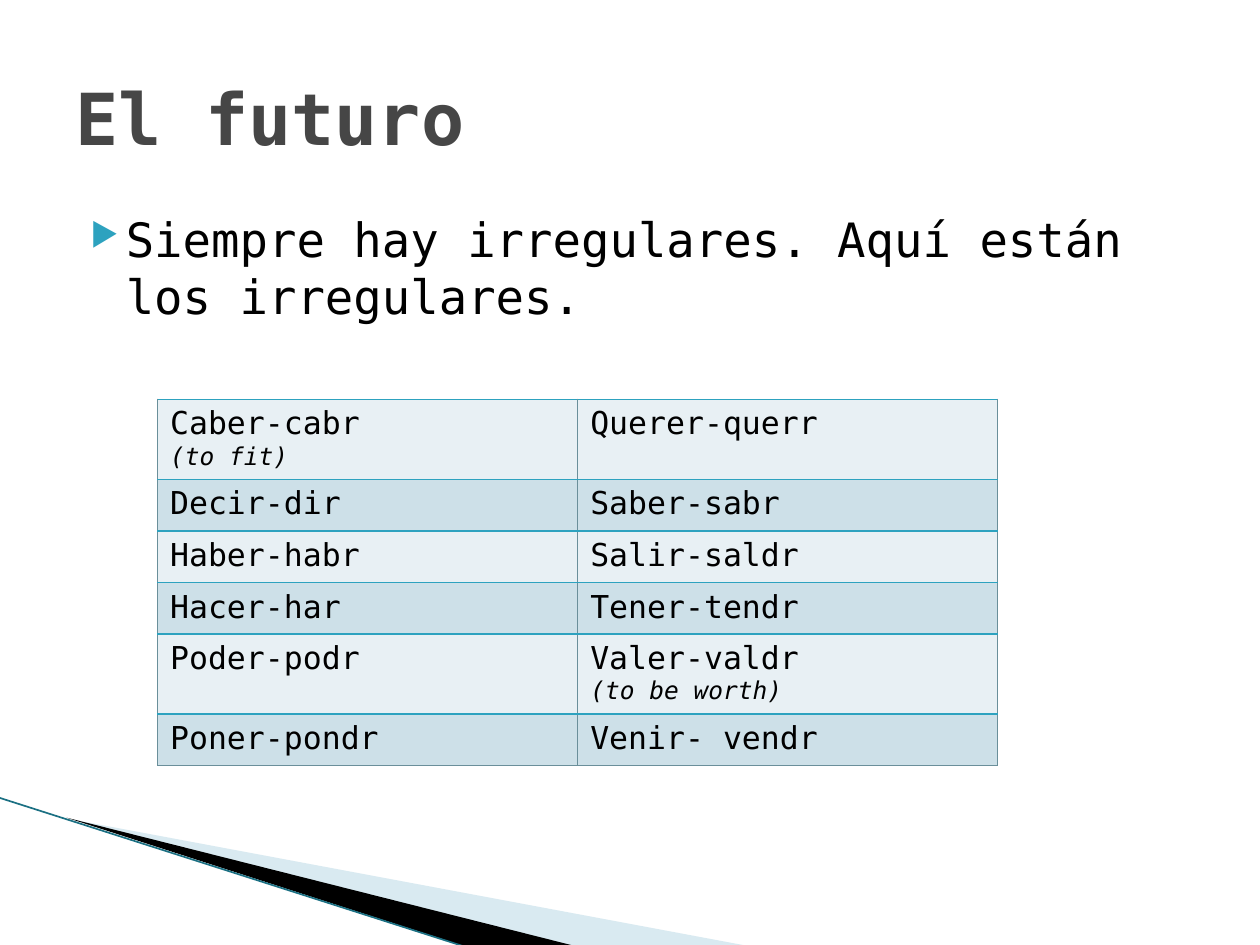
from lxml import etree
from pptx import Presentation
from pptx.dml.color import RGBColor
from pptx.enum import shapes, text
from pptx.oxml import ns
from pptx.util import Inches, Pt

FONT = "DejaVu Sans Mono"
BLACK = RGBColor(0, 0, 0)
GREY = RGBColor(0x46, 0x46, 0x46)
TEAL = RGBColor(0x2D, 0xA2, 0xBF)
DARK = RGBColor(0x1B, 0x70, 0x83)
EDGE = RGBColor(0x6A, 0x8F, 0x9A)
PALE = RGBColor(0xA0, 0xCB, 0xDC)
BANDS = RGBColor(0xE8, 0xF0, 0xF4), RGBColor(0xCD, 0xE0, 0xE8)

TITLE = "El futuro"
INTRO = "Siempre hay irregulares. Aquí están los irregulares."
VERBS = [
    ("Caber-cabr\n(to fit)", "Querer-querr"),
    ("Decir-dir", "Saber-sabr"),
    ("Haber-habr", "Salir-saldr"),
    ("Hacer-har", "Tener-tendr"),
    ("Poder-podr", "Valer-valdr\n(to be worth)"),
    ("Poner-pondr", "Venir- vendr"),
]
WEDGES = [
    ([(0.55, 6.5), (5.95, 7.51), (4.56, 7.51)], PALE, 40),
    ([(0.53, 6.49), (4.57, 7.51), (3.72, 7.52)], BLACK, 100),
]
HEAD = {"size": Pt(41), "bold": True}
BODY = {"size": Pt(27)}
VERB = {"size": Pt(18)}
GLOSS = {"size": Pt(14), "italic": True}


def style(par, form, color=BLACK):
    for key, val in {"name": FONT, **form}.items():
        setattr(par.font, key, val)
    par.font.color.rgb = color


def add(root, tag, **attrs):
    return etree.SubElement(root, ns.qn(tag), attrs)


def border(cell, side, color, width):
    line = add(cell._tc.get_or_add_tcPr(), "a:ln" + side, w=str(Pt(width)))
    add(add(line, "a:solidFill"), "a:srgbClr", val=str(color))


def wedge(slide, points, color, alpha):
    start, *rest = [(Inches(x), Inches(y)) for x, y in points]
    pen = slide.shapes.build_freeform(*start)
    pen.add_line_segments(rest)
    shape = pen.convert_to_shape()
    shape.shadow.inherit = False
    shape.fill.solid()
    shape.fill.fore_color.rgb = color
    shape.line.fill.background()
    if alpha < 100:
        tone = shape._element.spPr.find(".//" + ns.qn("a:srgbClr"))
        add(tone, "a:alpha", val=str(alpha * 1000))


def stripe(slide):
    ends = [Inches(n) for n in (-0.01, 6.33, 3.71, 7.52)]
    line = slide.shapes.add_connector(shapes.MSO_CONNECTOR.STRAIGHT, *ends)
    line.line.color.rgb = DARK
    line.line.width = Pt(0.95)
    add(line._element.spPr, "a:effectLst")


def heading(slide):
    box = slide.shapes.title
    box.left, box.top = Inches(0.5), Inches(0.3)
    box.width, box.height = Inches(9), Inches(1.25)
    frame = box.text_frame
    frame.text = TITLE
    frame.vertical_anchor = text.MSO_ANCHOR.MIDDLE
    par = frame.paragraphs[0]
    par.alignment = text.PP_ALIGN.LEFT
    style(par, HEAD, GREY)


def intro(slide):
    box = slide.shapes.add_textbox(Inches(0.5), Inches(1.62), Inches(9), Inches(4.95))
    frame = box.text_frame
    frame.word_wrap = True
    frame.text = INTRO
    par = frame.paragraphs[0]
    props = par._p.get_or_add_pPr()
    props.set("marL", str(Inches(0.4)))
    props.set("indent", str(Inches(-0.28)))
    add(add(props, "a:buClr"), "a:srgbClr", val=str(TEAL))
    add(props, "a:buSzPct", val="68000")
    add(props, "a:buChar", char="▶")
    style(par, BODY)


def verbs(slide):
    rows, cols = len(VERBS), len(VERBS[0])
    grid = slide.shapes.add_table(rows, cols, Inches(1.25), Inches(3.17),
                                  Inches(6.67), Inches(0.41 * rows)).table
    for r, row in enumerate(VERBS):
        for c, words in enumerate(row):
            cell = grid.cell(r, c)
            for side in "LRTB":
                inner = side == "T" or (side == "B" and r < rows - 1)
                border(cell, side, *((TEAL, 1) if inner else (EDGE, 0.5)))
            cell.fill.solid()
            cell.fill.fore_color.rgb = BANDS[r % 2]
            cell.text = words
            for par, form in zip(cell.text_frame.paragraphs, (VERB, GLOSS)):
                style(par, form)


def main():
    deck = Presentation()
    deck.slide_width, deck.slide_height = Inches(10), Inches(7.5)
    slide = deck.slides.add_slide(deck.slide_layouts[5])
    for item in WEDGES:
        wedge(slide, *item)
    stripe(slide)
    intro(slide)
    heading(slide)
    verbs(slide)
    deck.save("out.pptx")


if __name__ == "__main__":
    main()
